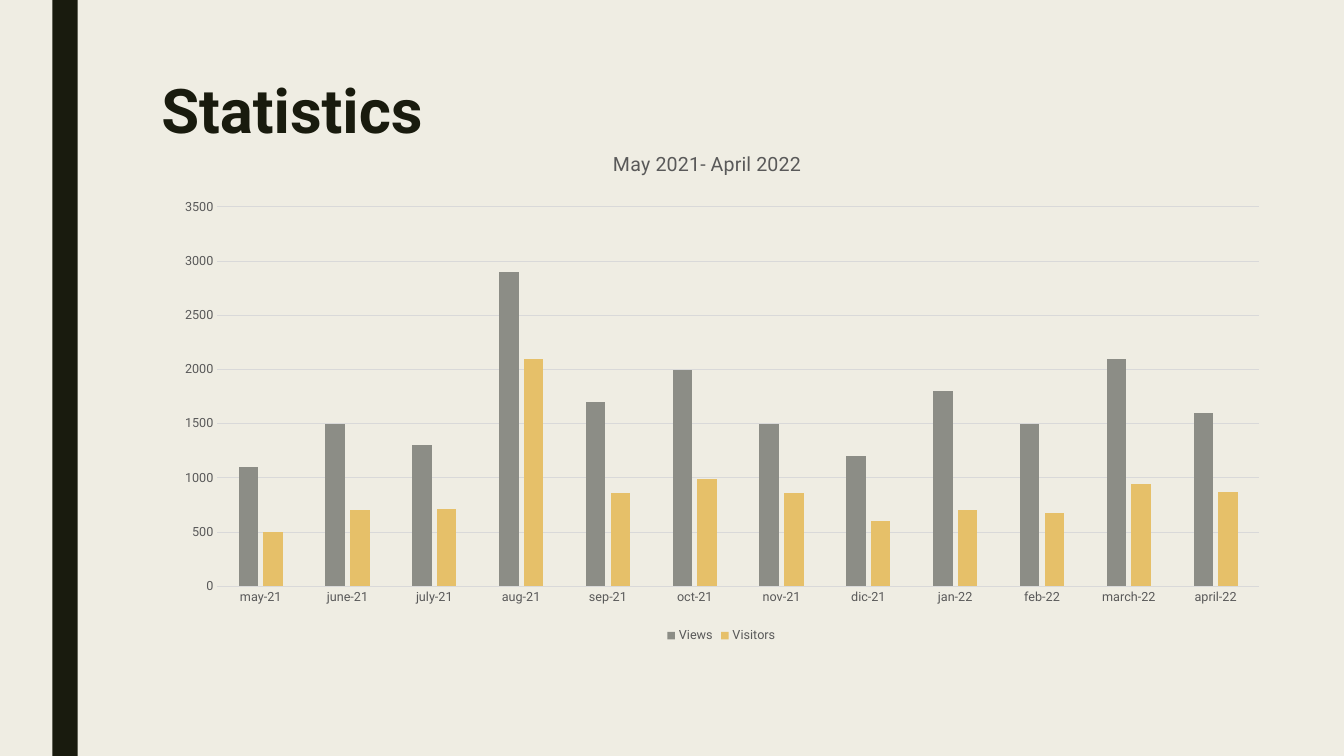
from dataclasses import dataclass

from pptx import Presentation
from pptx.chart.chart import Chart
from pptx.chart.data import CategoryChartData
from pptx.dml.color import RGBColor
from pptx.enum.chart import XL_CHART_TYPE, XL_LEGEND_POSITION, XL_TICK_MARK
from pptx.enum.shapes import MSO_SHAPE
from pptx.enum.text import MSO_ANCHOR, PP_ALIGN
from pptx.oxml import parse_xml
from pptx.oxml.ns import nsdecls
from pptx.slide import Slide
from pptx.text.text import Font, TextFrame
from pptx.util import Inches, Pt

COLUMNS = XL_CHART_TYPE.COLUMN_CLUSTERED
BOTTOM = XL_LEGEND_POSITION.BOTTOM
NO_TICK = XL_TICK_MARK.NONE
RECT = MSO_SHAPE.RECTANGLE
TOP = MSO_ANCHOR.TOP
LEFT, CENTER = PP_ALIGN.LEFT, PP_ALIGN.CENTER

CREAM = RGBColor(0xEF, 0xED, 0xE3)
DARK = RGBColor(0x19, 0x1B, 0x0E)
GRAY = RGBColor(0x59, 0x59, 0x59)
PALE = RGBColor(0xD9, 0xD9, 0xD9)
STONE = RGBColor(0x8C, 0x8D, 0x86)
GOLD = RGBColor(0xE6, 0xC0, 0x69)

FACE = "Roboto"
WIDE, HIGH = Inches(13.33), Inches(7.5)


@dataclass(frozen=True)
class Area:
    """A rectangle in inches on the slide."""
    left: float
    top: float
    width: float
    height: float

    def box(self) -> tuple[int, ...]:
        return tuple(Inches(n) for n in (self.left, self.top, self.width, self.height))


@dataclass(frozen=True)
class Series:
    name: str
    color: RGBColor
    values: tuple[int, ...]


BAND = Area(0.52, 0, 0.25, 7.5)
HEAD = Area(1.5, 0.75, 10.5, 1.62)
GRAPH = Area(1.6, 1.4, 11.11, 5.02)

MONTHS = ("may-21", "june-21", "july-21", "aug-21", "sep-21", "oct-21",
          "nov-21", "dic-21", "jan-22", "feb-22", "march-22", "april-22")
DATA = (
    Series("Views", STONE, (1100, 1500, 1300, 2900, 1700, 2000,
                            1500, 1200, 1800, 1500, 2100, 1600)),
    Series("Visitors", GOLD, (500, 700, 710, 2100, 860, 990,
                              860, 600, 700, 680, 940, 870)),
)


def style(font: Font, size: float, color: RGBColor, bold: bool = False) -> None:
    font.name, font.size, font.bold = FACE, Pt(size), bold
    font.color.rgb = color


def write(frame: TextFrame, text: str, *, size: float, color: RGBColor,
          bold: bool = False, align: PP_ALIGN = LEFT, pitch: float = 1.0) -> None:
    line = frame.paragraphs[0]
    line.alignment, line.line_spacing = align, pitch
    run = line.add_run()
    run.text = text
    style(run.font, size, color, bold)


def place(chart: Chart, part: str, **shares: float) -> None:
    """Fix a chart part at shares of the chart's size."""
    node = chart.element.xpath(f"c:chart/c:{part}")[0]
    for old in node.xpath("c:layout"):
        node.remove(old)
    inner = '<c:layoutTarget val="inner"/>' if part == "plotArea" else ""
    modes = "".join(f'<c:{key}Mode val="edge"/>' for key in "xy")
    sizes = "".join(f'<c:{key} val="{val}"/>' for key, val in shares.items())
    layout = parse_xml(f'<c:layout {nsdecls("c")}><c:manualLayout>'
                       f"{inner}{modes}{sizes}</c:manualLayout></c:layout>")
    node.insert(len(node.xpath("c:tx")), layout)


def draw_band(slide: Slide) -> None:
    band = slide.shapes.add_shape(RECT, *BAND.box())
    band.shadow.inherit = False
    band.fill.solid()
    band.fill.fore_color.rgb = DARK
    band.line.fill.background()


def draw_head(slide: Slide) -> None:
    head = slide.shapes.title
    head.left, head.top, head.width, head.height = HEAD.box()
    head.text_frame.vertical_anchor = TOP
    write(head.text_frame, "Statistics", size=44, color=DARK, bold=True, pitch=0.89)


def format_axes(chart: Chart) -> None:
    months, scale = chart.category_axis, chart.value_axis
    for axis in (months, scale):
        axis.major_tick_mark = axis.minor_tick_mark = NO_TICK
        style(axis.tick_labels.font, 9, GRAY)
    scale.minimum_scale, scale.maximum_scale, scale.major_unit = 0, 3500, 500
    scale.has_major_gridlines = True
    scale.format.line.fill.background()
    for line in (months.format.line, scale.major_gridlines.format.line):
        line.color.rgb = PALE
        line.width = Pt(0.75)


def draw_chart(slide: Slide) -> None:
    data = CategoryChartData()
    data.categories = MONTHS
    for item in DATA:
        data.add_series(item.name, item.values)
    chart = slide.shapes.add_chart(COLUMNS, *GRAPH.box(), data).chart
    style(chart.font, 10, GRAY)

    plot = chart.plots[0]
    plot.gap_width, plot.overlap, plot.vary_by_categories = 219, -27, False
    for bars, item in zip(plot.series, DATA):
        bars.format.fill.solid()
        bars.format.fill.fore_color.rgb = item.color
    format_axes(chart)

    chart.has_legend = True
    chart.legend.position = BOTTOM
    chart.legend.include_in_layout = False
    style(chart.legend.font, 9, GRAY)

    chart.has_title = True
    write(chart.chart_title.text_frame, "May 2021- April 2022",
          size=14, color=GRAY, align=CENTER)
    place(chart, "title", x=0.4, y=0.01)
    place(chart, "plotArea", x=0.05, y=0.13, w=0.93, h=0.75)


def main() -> None:
    deck = Presentation()
    deck.slide_width, deck.slide_height = WIDE, HIGH
    slide = deck.slides.add_slide(deck.slide_layouts[5])
    slide.background.fill.solid()
    slide.background.fill.fore_color.rgb = CREAM
    draw_band(slide)
    draw_head(slide)
    draw_chart(slide)
    deck.save("out.pptx")


if __name__ == "__main__":
    main()
